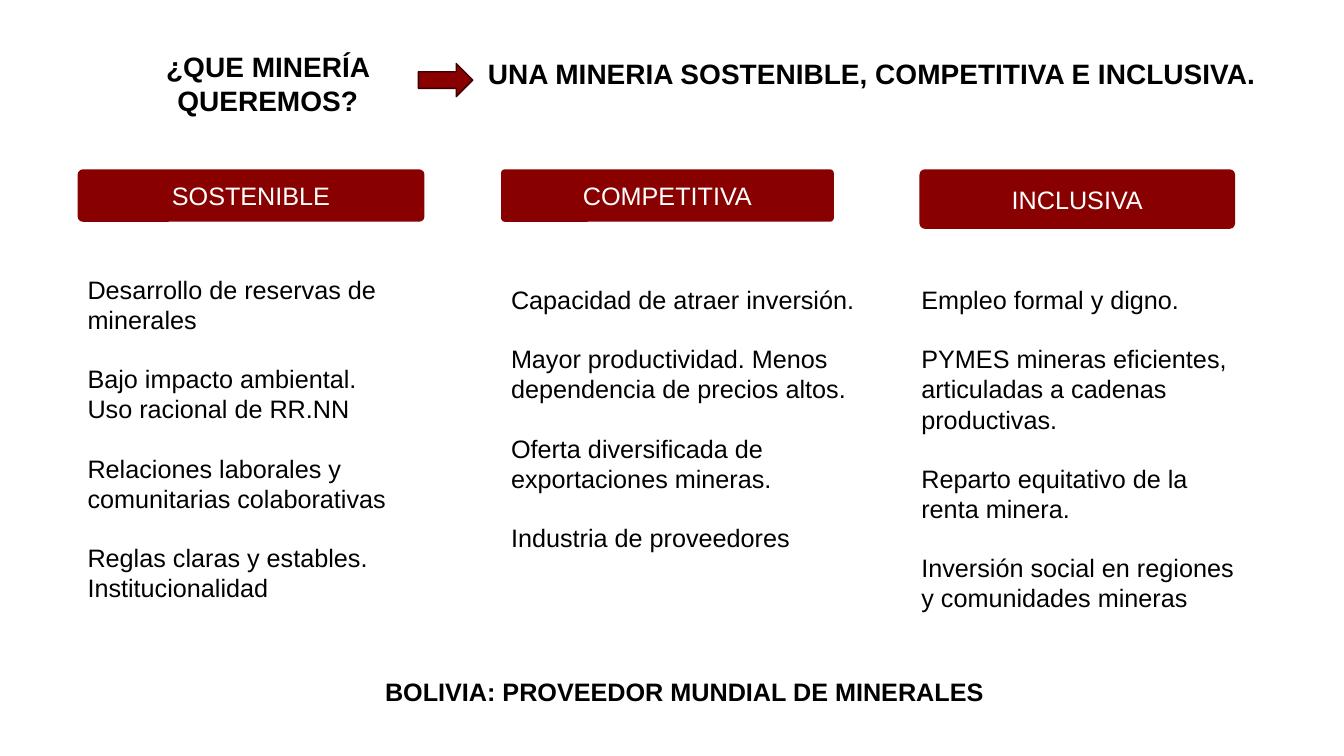
import pptx
import pptx.util
import pptx.dml.color
import pptx.enum.shapes
import pptx.enum.text

Inches = pptx.util.Inches
Pt = pptx.util.Pt
Shape = pptx.enum.shapes.MSO_SHAPE
Align = pptx.enum.text.PP_ALIGN
Anchor = pptx.enum.text.MSO_ANCHOR

HUES = {"red": "880000", "edge": "3C0000", "ink": "000000", "white": "FFFFFF"}
GAP = 20.7

PILLARS = [
    ("SOSTENIBLE", (0.77, 1.68, 3.44, 0.52), 0.1, (0.77, 2.67, 3.44, 3.74), [
        "Desarrollo de reservas de minerales",
        "Bajo impacto ambiental.\nUso racional de RR.NN",
        "Relaciones laborales y comunitarias colaborativas",
        "Reglas claras y estables.\nInstitucionalidad",
    ]),
    ("COMPETITIVA", (4.97, 1.68, 3.3, 0.52), 0.07, (4.97, 2.77, 3.61, 2.83), [
        "Capacidad de atraer inversión.",
        "Mayor productividad. Menos\ndependencia de precios altos.",
        "Oferta diversificada de exportaciones mineras.",
        "Industria de proveedores",
    ]),
    ("INCLUSIVA", (9.12, 1.68, 3.13, 0.59), 0.09, (9.04, 2.77, 3.44, 3.74), [
        "Empleo formal y digno.",
        "PYMES mineras eficientes, articuladas a cadenas productivas.",
        "Reparto equitativo de la renta minera.",
        "Inversión social en regiones y comunidades mineras",
    ]),
]


def tint(name):
    return pptx.dml.color.RGBColor.from_string(HUES[name])


def apply(target, values):
    for key, value in values.items():
        setattr(target, key, value)


def write(shape, groups, size=18, hue="ink", bold=False, align=Align.LEFT,
          anchor=Anchor.TOP):
    frame = shape.text_frame
    apply(frame, {"word_wrap": True, "vertical_anchor": anchor,
                  "auto_size": pptx.enum.text.MSO_AUTO_SIZE.NONE})
    lines = [(text, GAP if rank and not row else 0)
             for rank, group in enumerate(groups)
             for row, text in enumerate(group.split("\n"))]
    for rank, (text, space) in enumerate(lines):
        para = frame.add_paragraph() if rank else frame.paragraphs[0]
        apply(para, {"alignment": align, "space_before": Pt(space)})
        run = para.add_run()
        run.text = text
        apply(run.font, {"name": "Arial", "size": Pt(size), "bold": bold})
        run.font.color.rgb = tint(hue)


def add_text(slide, box, groups, **style):
    shape = slide.shapes.add_textbox(*map(Inches, box))
    write(shape, groups, **style)


def add_block(slide, kind, box):
    shape = slide.shapes.add_shape(kind, *map(Inches, box))
    shape.shadow.inherit = False
    shape.fill.solid()
    shape.fill.fore_color.rgb = tint("red")
    shape.line.fill.background()
    return shape


def add_header(slide, box):
    left, top, width, height = box
    title = slide.shapes.title
    apply(title, dict(zip(("left", "top", "width", "height"),
                          map(Inches, (left, top, 3.93, height)))))
    write(title, ["¿QUE MINERÍA QUEREMOS?"], size=20, bold=True,
          align=Align.CENTER)
    arrow = add_block(slide, Shape.RIGHT_ARROW,
                      (left + 3.46, top + 0.19, 0.54, 0.33))
    arrow.line.color.rgb = tint("edge")
    arrow.line.width = Pt(1)
    add_text(slide, (left + 4.01, top + 0.07, width - 4.01, 0.4),
             ["UNA MINERIA SOSTENIBLE, COMPETITIVA E INCLUSIVA."],
             size=20, bold=True, align=Align.CENTER)


def add_pillar(slide, name, head, curve, body, points):
    block = add_block(slide, Shape.ROUNDED_RECTANGLE, head)
    block.adjustments[0] = curve
    write(block, [name], hue="white", align=Align.CENTER, anchor=Anchor.MIDDLE)
    add_text(slide, body, points)


def main():
    deck = pptx.Presentation()
    apply(deck, {"slide_width": Inches(13.33), "slide_height": Inches(7.5)})
    slide = deck.slides.add_slide(deck.slide_layouts[5])
    add_header(slide, (0.69, 0.44, 11.9, 0.77))
    for pillar in PILLARS:
        add_pillar(slide, *pillar)
    add_text(slide, (3.72, 6.66, 6.28, 0.4),
             ["BOLIVIA: PROVEEDOR MUNDIAL DE MINERALES"], bold=True)
    deck.save("out.pptx")


if __name__ == "__main__":
    main()
